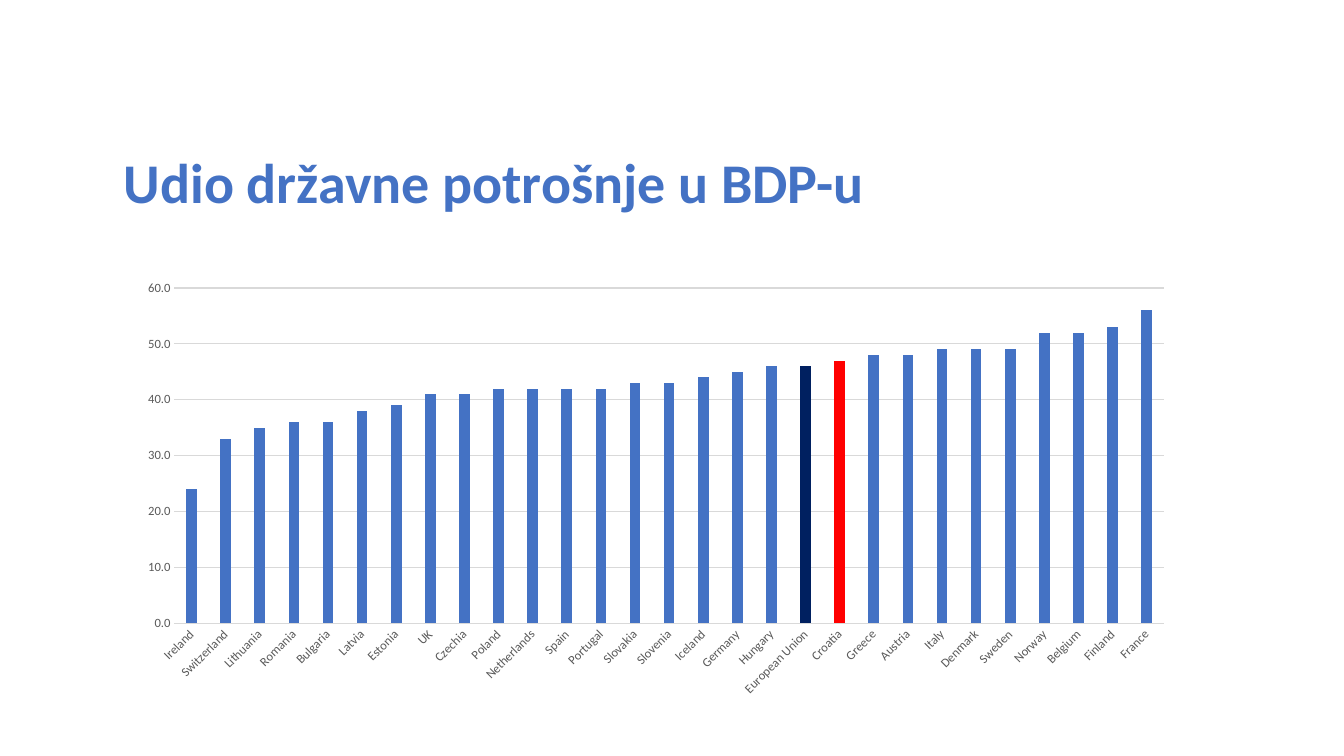
from dataclasses import dataclass

from pptx import Presentation
from pptx import util as u
from pptx.chart.data import CategoryChartData
from pptx.dml.color import RGBColor
from pptx.enum import chart as ch, text

TITLE = "Udio državne potrošnje u BDP-u"
SHARES = {
    "Ireland": 24, "Switzerland": 33, "Lithuania": 35, "Romania": 36,
    "Bulgaria": 36, "Latvia": 38, "Estonia": 39, "UK": 41,
    "Czechia": 41, "Poland": 42, "Netherlands": 42, "Spain": 42,
    "Portugal": 42, "Slovakia": 43, "Slovenia": 43, "Iceland": 44,
    "Germany": 45, "Hungary": 46, "European Union": 46, "Croatia": 47,
    "Greece": 48, "Austria": 48, "Italy": 49, "Denmark": 49,
    "Sweden": 49, "Norway": 52, "Belgium": 52, "Finland": 53, "France": 56,
}
HIGHLIGHTS = {"European Union": "002060", "Croatia": "FF0000"}
SLIDE_SIZE = (1344, 756)
TITLE_BOX = (114, 112, 885, 146)
CHART_BOX = (127, 272, 1058, 433)
PX_PER_INCH = 100.8
AUTO_ROTATION = "-60000000"


@dataclass(frozen=True)
class Theme:
    font: str = "Calibri"
    accent: str = "4472C4"
    label: str = "595959"
    grid: str = "D9D9D9"
    title_size: int = 40
    label_size: int = 9
    line_width: float = 0.75


THEME = Theme()


def px(n):
    return u.Emu(round(n * 914400 / PX_PER_INCH))


def set_font(font, size, color, bold=False):
    font.name = THEME.font
    font.size = u.Pt(size)
    font.bold = bold
    font.color.rgb = RGBColor.from_string(color)


def set_fill(fill, color):
    fill.solid()
    fill.fore_color.rgb = RGBColor.from_string(color)


def set_line(line):
    line.color.rgb = RGBColor.from_string(THEME.grid)
    line.width = u.Pt(THEME.line_width)


def add_chart(s):
    data = CategoryChartData(number_format="#,##0.0")
    data.categories = list(SHARES)
    data.add_series("Series 1", list(SHARES.values()))
    chart = s.shapes.add_chart(
        ch.XL_CHART_TYPE.COLUMN_CLUSTERED, *map(px, CHART_BOX), data
    ).chart
    chart.has_legend = False
    chart.has_title = False
    set_font(chart.font, THEME.label_size, THEME.label)

    for axis in (chart.category_axis, chart.value_axis):
        axis.major_tick_mark = axis.minor_tick_mark = ch.XL_TICK_MARK.NONE
        set_font(axis.tick_labels.font, THEME.label_size, THEME.label)
        axis._element.txPr.bodyPr.set("rot", AUTO_ROTATION)
    names, values = chart.category_axis, chart.value_axis
    set_line(names.format.line)
    values.format.line.fill.background()
    set_line(values.major_gridlines.format.line)
    values.minimum_scale, values.maximum_scale, values.major_unit = 0, 60, 10
    values.tick_labels.number_format = "#,##0.0"
    values.tick_labels.number_format_is_linked = False

    plot = chart.plots[0]
    plot.vary_by_categories = False
    plot.gap_width = 219
    plot.overlap = -27
    series = plot.series[0]
    series.invert_if_negative = False
    set_fill(series.format.fill, THEME.accent)
    for i, name in enumerate(SHARES):
        if name in HIGHLIGHTS:
            set_fill(series.points[i].format.fill, HIGHLIGHTS[name])


def add_title(s):
    tf = s.shapes.add_textbox(*map(px, TITLE_BOX)).text_frame
    tf.word_wrap = True
    tf.vertical_anchor = text.MSO_ANCHOR.MIDDLE
    p = tf.paragraphs[0]
    p.text = TITLE
    p.line_spacing = 0.9
    set_font(p.font, THEME.title_size, THEME.accent, bold=True)


def main():
    prs = Presentation()
    prs.slide_width, prs.slide_height = map(px, SLIDE_SIZE)
    s = prs.slides.add_slide(prs.slide_layouts[6])
    add_chart(s)
    add_title(s)
    prs.save("out.pptx")


if __name__ == "__main__":
    main()
